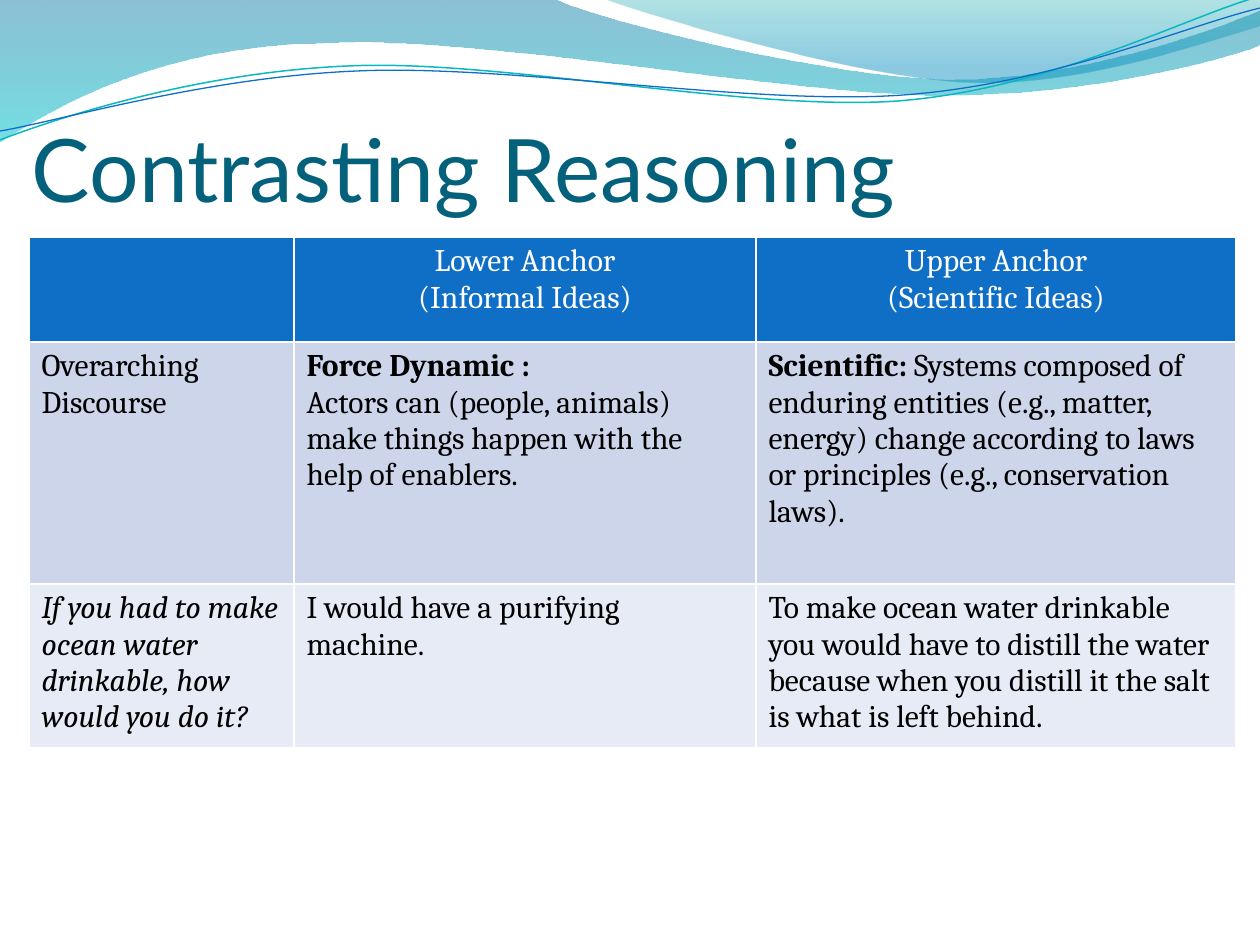
import math
import pptx
import pptx.util
import pptx.dml.color
import pptx.enum.text
import pptx.oxml
import pptx.oxml.ns
import lxml.etree

PX = 914400 / 126
HUES = {
    "title": "04617B", "head": "0F6FC6", "odd": "CCD5EA", "even": "E7EBF5",
    "white": "FFFFFF", "black": "000000", "teal": "0AB8BF", "blue": "0F6FC6",
    "deep": "0074A1", "cyan": "00C6CF", "sea": "00A1A9", "sky": "008BBF",
}
ALIGN = pptx.enum.text.PP_ALIGN
qn = pptx.oxml.ns.qn


def color(name):
    return pptx.dml.color.RGBColor.from_string(HUES[name])


def write(frame, text, size=18, font="Cambria", hue="black", align=ALIGN.LEFT, bold="", italic=False):
    frame.word_wrap = True
    for i, line in enumerate(text.split("\n")):
        para = frame.paragraphs[0] if i == 0 else frame.add_paragraph()
        para.alignment = align
        lead = bold if bold and line.startswith(bold) else ""
        for part, heavy in ((lead, True), (line[len(lead):], False)):
            if part:
                run = para.add_run()
                run.text = part
                run.font.size = pptx.util.Pt(size)
                run.font.name = font
                run.font.bold = heavy
                run.font.italic = italic
                run.font.color.rgb = color(hue)


deck = pptx.Presentation()
deck.slide_width = round(1260 * PX)
deck.slide_height = round(945 * PX)
slide = deck.slides.add_slide(deck.slide_layouts[6])
shapes = slide.shapes

waves = [
    ([(0, 0), (554, -1), (600, 21, 837, 79, 955, 79), (1075, 79, 1207, 33, 1260, 11),
      (1261, 45), (1239, 55, 1096, 96, 940, 95), (784, 95, 481, 35, 324, 43),
      (163, 45, 58, 105, -1, 142)],
     [(0, "deep", 45), (1, "cyan", 55)], None),
    ([(604, -1), (641, 14, 859, 78, 969, 82), (1079, 87, 1211, 40, 1260, 26), (1260, 0)],
     [(0, "sea", 30), (0.8, "sky", 45)], None),
    ([(0, 140), (60, 117, 199, 72, 349, 66), (498, 59, 747, 112, 898, 101),
      (1050, 89, 1182, 19, 1257, -3)], None, ("teal", 0.85, 629, 72)),
    ([(0, 131), (59, 121, 207, 77, 357, 71), (508, 64, 752, 106, 903, 95),
      (1053, 84, 1185, 26, 1260, 8)], None, ("blue", 0.75, 629, 74)),
]
TILT = 357.3
for path, stops, pen in waves:
    turn = math.radians(-TILT if pen else 0)
    mid = pen[2:] if pen else (0, 0)
    segs = []
    for seg in path:
        dots = []
        for x, y in zip(seg[::2], seg[1::2]):
            dx, dy = x - mid[0], y - mid[1]
            dots.append((round((mid[0] + dx * math.cos(turn) - dy * math.sin(turn)) * PX),
                         round((mid[1] + dx * math.sin(turn) + dy * math.cos(turn)) * PX)))
        segs.append(dots)
    pad = shapes.build_freeform(*segs[0][0], scale=1.0)
    pad.add_line_segments([dots[-1] for dots in segs[1:]], close=bool(stops))
    wave = pad.convert_to_shape()
    wave.shadow.inherit = False
    for step, dots in zip(list(wave.element.spPr.iter(qn("a:lnTo"))), segs[1:]):
        if len(dots) == 3:
            curve = lxml.etree.Element(qn("a:cubicBezTo"))
            for x, y in dots:
                lxml.etree.SubElement(curve, qn("a:pt"), x=str(x - wave.left), y=str(y - wave.top))
            step.getparent().replace(step, curve)
    if stops:
        wave.line.fill.background()
        wave.fill.gradient()
        wave.fill.gradient_angle = 270
        for stop, (place, hue, alpha) in zip(wave.fill.gradient_stops, stops):
            stop.position = place
            stop.color.rgb = color(hue)
        tints = wave.element.spPr.find(qn("a:gradFill")).iter(qn("a:srgbClr"))
        for tint, (place, hue, alpha) in zip(tints, stops):
            lxml.etree.SubElement(tint, qn("a:alpha"), val=str(alpha * 1000))
    else:
        wave.rotation = TILT
        wave.fill.background()
        wave.line.color.rgb = color(pen[0])
        wave.line.width = pptx.util.Pt(pen[1])

title = shapes.add_textbox(*(round(v * PX) for v in (32, 94, 922, 126))).text_frame
title.margin_left = title.margin_right = title.margin_bottom = 0
title.margin_top = round(6 * PX)
title.vertical_anchor = pptx.enum.text.MSO_ANCHOR.BOTTOM
write(title, "Contrasting Reasoning", size=50, font="Lato", hue="title")

cols = [265, 462, 480]
rows = [105, 242, 60]
cells = [
    ["", "Lower Anchor\n(Informal Ideas)", "Upper Anchor\n(Scientific Ideas)"],
    ["Overarching Discourse",
     "Force Dynamic :\nActors can (people, animals) make things happen with the help of enablers.",
     "Scientific: Systems composed of enduring entities (e.g., matter, energy) change "
     "according to laws or principles (e.g., conservation laws)."],
    ["If you had to make ocean water drinkable, how would you do it?",
     "I would have a purifying machine.",
     "To make ocean water drinkable you would have to distill the water because when "
     "you distill it the salt is what is left behind."],
]
leads = {(1, 1): "Force Dynamic :", (1, 2): "Scientific: "}
box = (29, 237, sum(cols), sum(rows))
grid = shapes.add_table(len(rows), len(cols), *(round(v * PX) for v in box))
table = grid.table
table.first_row = table.horz_banding = False
for col, wide in zip(table.columns, cols):
    col.width = round(wide * PX)
for r, (row, high) in enumerate(zip(table.rows, rows)):
    row.height = round(high * PX)
    for c, cell in enumerate(row.cells):
        cell.fill.solid()
        cell.fill.fore_color.rgb = color(("head", "odd", "even")[r])
        if cells[r][c]:
            write(cell.text_frame, cells[r][c], hue="black" if r else "white",
                  align=ALIGN.LEFT if r else ALIGN.CENTER,
                  bold=leads.get((r, c), ""), italic=(r, c) == (2, 0))
        props = cell._tc.get_or_add_tcPr()
        for i, side in enumerate(("lnL", "lnR", "lnT", "lnB")):
            edge = lxml.etree.Element(qn("a:" + side), w="12700")
            paint = lxml.etree.SubElement(edge, qn("a:solidFill"))
            lxml.etree.SubElement(paint, qn("a:srgbClr"), val=HUES["white"])
            props.insert(i, edge)
grid.height = round(548 * PX)

deck.save("out.pptx")
